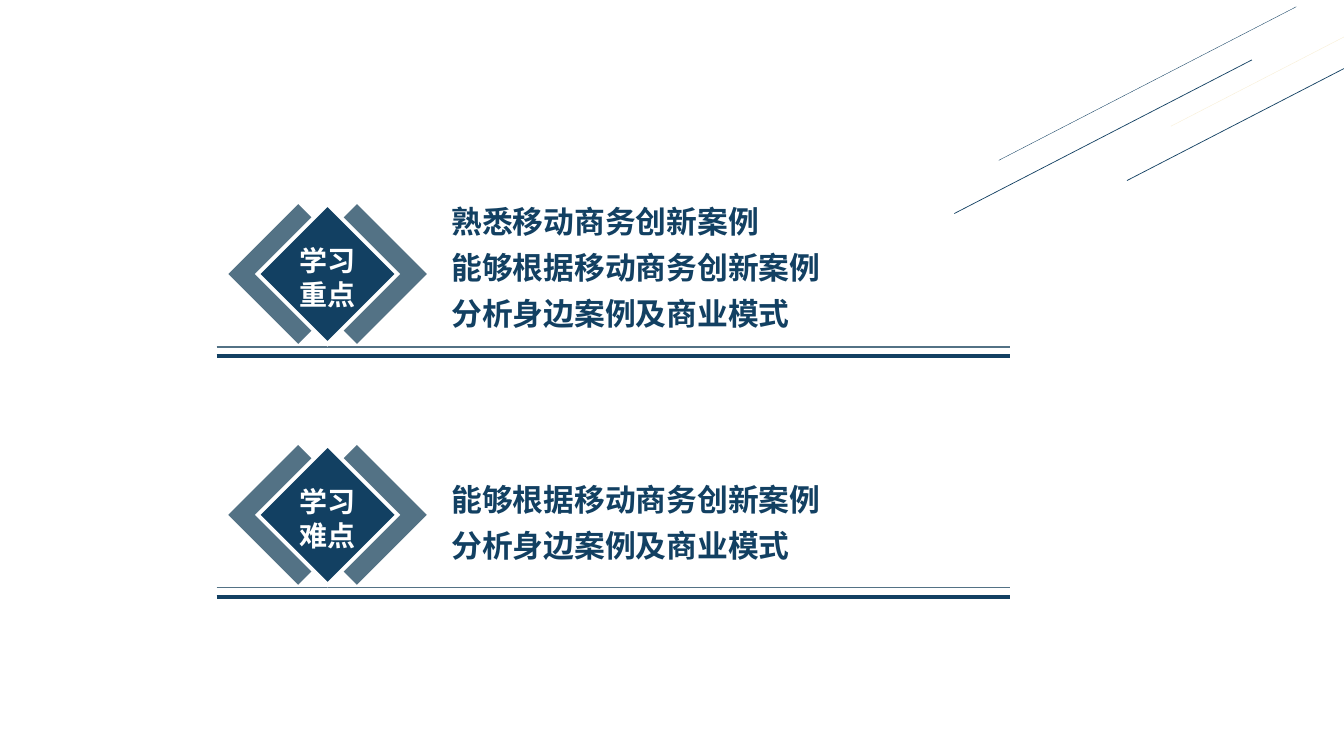
from dataclasses import dataclass

from pptx import Presentation
from pptx.dml.color import RGBColor
from pptx.enum.shapes import MSO_CONNECTOR, MSO_SHAPE
from pptx.enum.text import MSO_AUTO_SIZE, PP_ALIGN
from pptx.oxml.ns import qn
from pptx.util import Cm, Pt
from lxml.etree import SubElement


@dataclass(frozen=True)
class Theme:
    navy: RGBColor = RGBColor(0x12, 0x40, 0x62)
    slate: RGBColor = RGBColor(0x53, 0x72, 0x85)
    gold: RGBColor = RGBColor(0xDC, 0xAA, 0x1F)
    white: RGBColor = RGBColor(0xFF, 0xFF, 0xFF)
    font: str = "Noto Sans CJK SC"
    label_size: Pt = Pt(20)
    goal_size: Pt = Pt(22)


theme = Theme()


def add_line(x1, y1, x2, y2, color, width):
    line = slide.shapes.add_connector(
        MSO_CONNECTOR.STRAIGHT, Cm(x1), Cm(y1), Cm(x2), Cm(y2))
    line.line.color.rgb = color
    line.line.width = Pt(width)
    SubElement(line._element.spPr, qn("a:effectLst"))
    return line


def add_bold_text(shapes, box, lines, size, color, spacing, align):
    """Add an unwrapped text box with one paragraph per line."""
    textbox = shapes.add_textbox(*map(Cm, box))
    frame = textbox.text_frame
    frame.text = "\n".join(lines)
    frame.word_wrap = False
    frame.auto_size = MSO_AUTO_SIZE.SHAPE_TO_FIT_TEXT
    for paragraph in frame.paragraphs:
        paragraph.line_spacing = spacing
        paragraph.alignment = align
        for run in paragraph.runs:
            run.font.name = theme.font
            run.font.size = size
            run.font.bold = True
            run.font.color.rgb = color
            east_asian = SubElement(run.font._element, qn("a:ea"))
            east_asian.set("typeface", theme.font)


prs = Presentation()
prs.slide_width, prs.slide_height = Cm(33.87), Cm(19.05)
slide = prs.slides.add_slide(prs.slide_layouts[6])

# Parallel slanted lines in the top right corner
SLANT_X, SLANT_Y = 7.5, -3.87
for x, y, color, width in [
    (24.05, 5.38, theme.navy, 0.5),
    (25.17, 4.04, theme.navy, 0.25),
    (28.4, 4.55, theme.navy, 0.5),
    (29.51, 3.18, theme.gold, 0.25),
]:
    slant = add_line(x, y, x + SLANT_X, y + SLANT_Y, color, width)
    if color == theme.gold:
        gold_fill = slant._element.spPr.find(".//" + qn("a:srgbClr"))
        SubElement(gold_fill, qn("a:alpha")).set("val", "20000")

# Two sections: a diamond badge, its goals and a double rule
RULE_LEFT, RULE_RIGHT = 5.46, 25.45
DIAMOND = 2.49
sections = [
    (8.74, ["学习", "重点"], 4.75, 3.78,
     ["熟悉移动商务创新案例", "能够根据移动商务创新案例", "分析身边案例及商业模式"]),
    (14.81, ["学习", "难点"], 11.76, 2.59,
     ["能够根据移动商务创新案例", "分析身边案例及商业模式"]),
]
for rule_y, label, goals_top, goals_height, goals in sections:
    add_line(RULE_LEFT, rule_y, RULE_RIGHT, rule_y, theme.slate, 1)

    badge = None
    for left, color in [(7.75, theme.slate), (6.27, theme.slate), (7.01, theme.navy)]:
        front = color == theme.navy
        if front:
            badge = slide.shapes.add_group_shape()
        shapes = badge.shapes if front else slide.shapes
        diamond = shapes.add_shape(
            MSO_SHAPE.ROUNDED_RECTANGLE,
            Cm(left), Cm(rule_y - 3.08), Cm(DIAMOND), Cm(DIAMOND))
        diamond.adjustments[0] = 0
        diamond.rotation = 45
        diamond.shadow.inherit = False
        diamond.fill.solid()
        diamond.fill.fore_color.rgb = color
        if front:
            diamond.line.color.rgb = theme.white
            diamond.line.width = Pt(2.75)
            outline = diamond._element.spPr.find(qn("a:ln"))
            SubElement(outline, qn("a:miter")).set("lim", "800000")
        else:
            diamond.line.fill.background()
    add_bold_text(badge.shapes, (7.29, rule_y - 2.72, 1.93, 1.96), label,
                  theme.label_size, theme.white, 1.0, PP_ALIGN.CENTER)

    add_line(RULE_LEFT, rule_y + 0.23, RULE_RIGHT, rule_y + 0.23, theme.navy, 3)
    add_bold_text(slide.shapes, (11.13, goals_top, 9.83, goals_height), goals,
                  theme.goal_size, theme.navy, 1.25, PP_ALIGN.LEFT)

prs.save("out.pptx")
